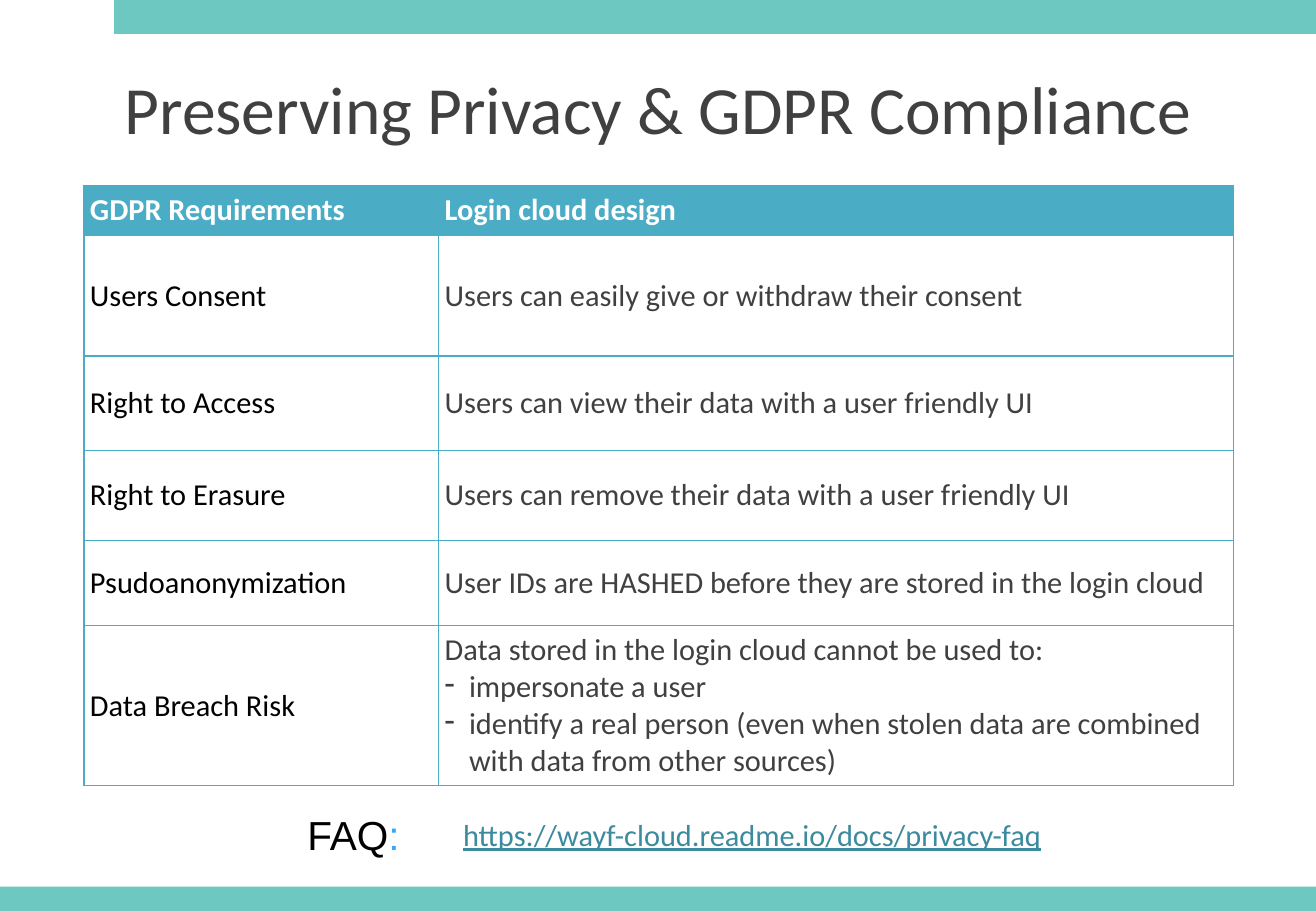
from lxml.etree import SubElement
from pptx import Presentation
from pptx.dml.color import RGBColor
from pptx.enum.shapes import MSO_SHAPE
from pptx.enum.text import MSO_ANCHOR, MSO_AUTO_SIZE, PP_ALIGN
from pptx.oxml.ns import qn
from pptx.util import Inches, Pt

COLORS = {"band": "6DC8C1", "grid": "4BACC6", "white": "FFFFFF", "black": "000000",
          "gray": "404040", "link": "3C8A9E", "colon": "33A9FD"}
COLS = [2.92, 6.54]
HEIGHTS = [0.41, 0.99, 0.78, 0.74, 0.7, 1.32]
ROWS = [
    ("GDPR Requirements", ["Login cloud design"]),
    ("Users Consent", ["Users can easily give or withdraw their consent"]),
    ("Right to Access", ["Users can view their data with a user friendly UI"]),
    ("Right to Erasure", ["Users can remove their data with a user friendly UI"]),
    ("Psudoanonymization", ["User IDs are HASHED before they are stored in the login cloud"]),
    ("Data Breach Risk", [
        "Data stored in the login cloud cannot be used to:",
        "impersonate a user",
        "identify a real person (even when stolen data are combined "
        "with data from other sources)"]),
]


def rgb(name):
    return RGBColor.from_string(COLORS[name])


def inset(item, size):
    for side in ("left", "top", "right", "bottom"):
        setattr(item, f"margin_{side}", Inches(size))


class Deck:
    def __init__(self, width, height):
        self.prs = Presentation()
        self.prs.slide_width = Inches(width)
        self.prs.slide_height = Inches(height)
        self.slide = self.prs.slides.add_slide(self.prs.slide_layouts[6])
        self.style = {"name": "Calibri", "size": Pt(18), "bold": False}

    def run(self, para, text, color, **extra):
        run = para.add_run()
        run.text = text
        for key, value in {**self.style, **extra}.items():
            setattr(run.font, key, value)
        run.font.color.rgb = rgb(color)

    def bar(self, *box):
        shape = self.slide.shapes.add_shape(MSO_SHAPE.RECTANGLE, *map(Inches, box))
        shape.shadow.inherit = False
        shape.fill.solid()
        shape.fill.fore_color.rgb = rgb("band")
        shape.line.fill.background()

    def label(self, box, runs, pad, **form):
        """Add a one-line text box; runs are (text, color, font values)."""
        frame = self.slide.shapes.add_textbox(*map(Inches, box)).text_frame
        inset(frame, pad)
        for key, value in form.items():
            setattr(frame, key, value)
        para = frame.paragraphs[0]
        for text, color, font in runs:
            self.run(para, text, color, **font)
        return para

    def bullet(self, para):
        """Hang the paragraph behind a dash."""
        props = para._p.get_or_add_pPr()
        props.set("marL", str(Inches(0.2)))
        props.set("indent", str(Inches(-0.2)))
        SubElement(props, qn("a:buChar"), char="-")

    def border(self, cell):
        props = cell._tc.get_or_add_tcPr()
        for side in "LRTB":
            line = SubElement(props, qn(f"a:ln{side}"), w=str(Pt(1)))
            fill = SubElement(line, qn("a:solidFill"))
            SubElement(fill, qn("a:srgbClr"), val=COLORS["grid"])

    def cell(self, cell, lines, color, head):
        inset(cell, 0.05)
        cell.vertical_anchor = MSO_ANCHOR.TOP if head else MSO_ANCHOR.MIDDLE
        self.border(cell)
        cell.fill.solid()
        cell.fill.fore_color.rgb = rgb("grid" if head else "white")
        frame = cell.text_frame
        for i, text in enumerate(lines):
            para = frame.add_paragraph() if i else frame.paragraphs[0]
            if i:
                self.bullet(para)
            self.run(para, text, color, bold=head)

    def table(self, left, top):
        box = (left, top, sum(COLS), sum(HEIGHTS))
        table = self.slide.shapes.add_table(
            len(ROWS), len(COLS), *map(Inches, box)).table
        table.horz_banding = False
        for col, width in zip(table.columns, COLS):
            col.width = Inches(width)
        for r, (name, lines) in enumerate(ROWS):
            table.rows[r].height = Inches(HEIGHTS[r])
            head = r == 0
            self.cell(table.cell(r, 0), [name], "white" if head else "black", head)
            self.cell(table.cell(r, 1), lines, "white" if head else "gray", head)


def main():
    deck = Deck(10.83, 7.5)
    deck.bar(0, 7.3, 10.83, 0.2)
    deck.bar(0.94, 0, 9.89, 0.28)
    title = deck.label((0.54, 0.5, 9.75, 1.25),
                       [("Preserving Privacy & GDPR Compliance", "gray", {"size": Pt(40)})],
                       0.05, word_wrap=True)
    title.alignment = PP_ALIGN.CENTER
    deck.table(0.69, 1.53)
    form = {"word_wrap": False, "vertical_anchor": MSO_ANCHOR.MIDDLE,
            "auto_size": MSO_AUTO_SIZE.SHAPE_TO_FIT_TEXT}
    link = deck.label((3.62, 6.66, 5.14, 0.42),
                      [("https://wayf-cloud.readme.io/docs/privacy-faq", "link",
                        {"underline": True})], 0.06, **form)
    link.alignment = PP_ALIGN.CENTER
    font = {"name": "Arial", "size": Pt(24)}
    deck.label((2.47, 6.62, 0.88, 0.49),
               [("FAQ", "black", font), (":", "colon", font)], 0.06, **form)
    deck.prs.save("out.pptx")


if __name__ == "__main__":
    main()
